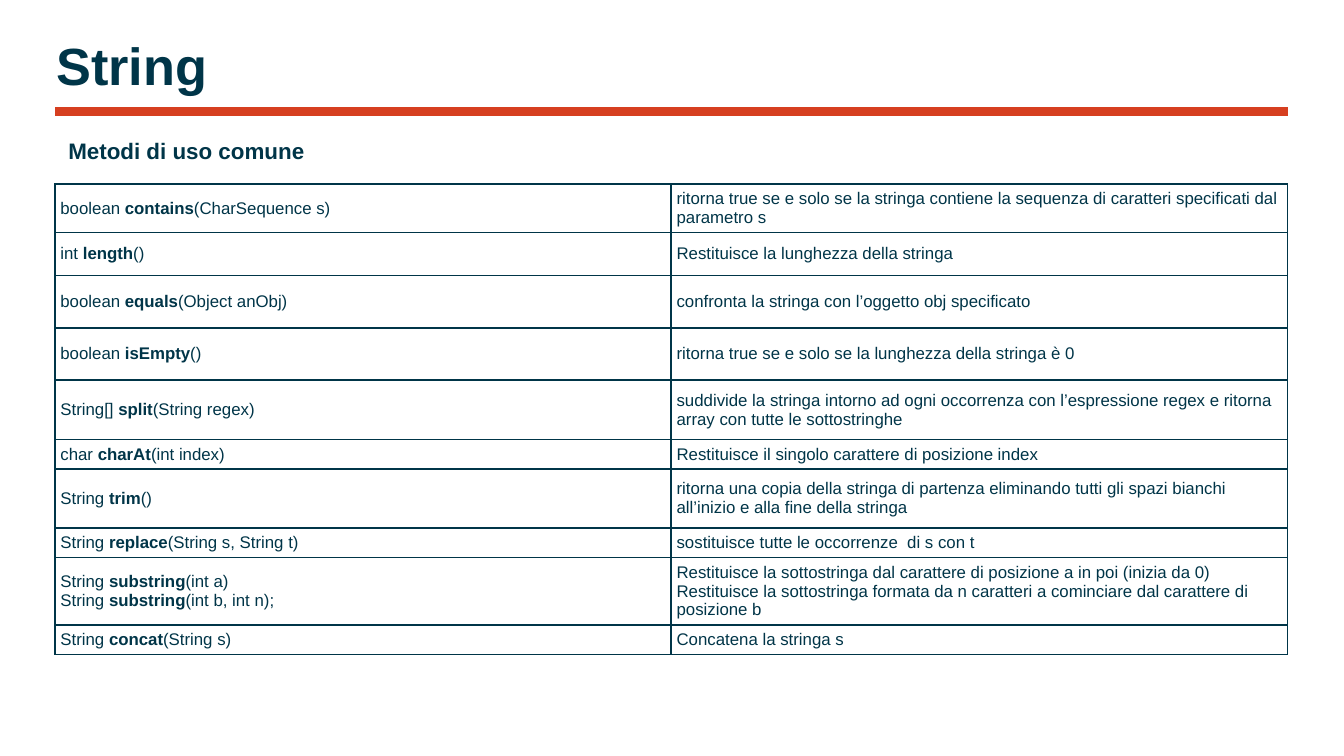
from lxml.etree import SubElement
from pptx import Presentation
from pptx.dml.color import RGBColor
from pptx.enum.shapes import MSO_CONNECTOR as Connector
from pptx.enum.text import MSO_ANCHOR as Anchor, PP_ALIGN as Align
from pptx.oxml.ns import qn
from pptx.util import Inches, Pt

NAVY = RGBColor(0x00, 0x35, 0x48)
RED = RGBColor(0xD6, 0x3F, 0x20)
METHODS = [
    (0.32, [("boolean ", "contains", "(CharSequence s)")],
     ["ritorna true se e solo se la stringa contiene la sequenza di caratteri specificati dal parametro s"]),
    (0.32, [("int ", "length", "()")], ["Restituisce la lunghezza della stringa"]),
    (0.39, [("boolean ", "equals", "(Object anObj)")],
     ["confronta la stringa con l’oggetto obj specificato"]),
    (0.39, [("boolean ", "isEmpty", "()")],
     ["ritorna true se e solo se la lunghezza della stringa è 0"]),
    (0.44, [("String[] ", "split", "(String regex)")],
     ["suddivide la stringa intorno ad ogni occorrenza con l’espressione regex e ritorna "
      "array con tutte le sottostringhe"]),
    (0.21, [("char ", "charAt", "(int index)")],
     ["Restituisce il singolo carattere di posizione index"]),
    (0.44, [("String ", "trim", "()")],
     ["ritorna una copia della stringa di partenza eliminando tutti gli spazi bianchi "
      "all’inizio e alla fine della stringa"]),
    (0.17, [("String ", "replace", "(String s, String t)")],
     ["sostituisce tutte le occorrenze  di s con t"]),
    (0.11, [("String ", "substring", "(int a)"), ("String ", "substring", "(int b, int n);")],
     ["Restituisce la sottostringa dal carattere di posizione a in poi (inizia da 0)",
      "Restituisce la sottostringa formata da n caratteri a cominciare dal carattere di posizione b"]),
    (0.01, [("String ", "concat", "(String s)")], ["Concatena la stringa s"]),
]


def add_run(paragraph, text, size, bold):
    run = paragraph.add_run()
    run.text = text
    run.font.name = "Arial"
    run.font.size = Pt(size)
    run.font.bold = bold
    run.font.color.rgb = NAVY


def draw_borders(cell):
    properties = cell._tc.get_or_add_tcPr()
    for side in ("a:lnL", "a:lnR", "a:lnT", "a:lnB"):
        border = SubElement(properties, qn(side), w=str(Pt(1)))
        SubElement(SubElement(border, qn("a:solidFill")), qn("a:srgbClr"), val=str(NAVY))


prs = Presentation()
prs.slide_width = Inches(10)
prs.slide_height = prs.slide_width * 9 // 16
slide = prs.slides.add_slide(prs.slide_layouts[5])
left = Inches(0.41)
content_width = Inches(9.17)

rule = slide.shapes.add_connector(
    Connector.STRAIGHT, left, Inches(0.83), left + content_width, Inches(0.83))
rule.line.color.rgb = RED
rule.line.width = Pt(4.5)
SubElement(rule._element.spPr, qn("a:effectLst"))

heading = slide.shapes.title
heading.left, heading.top = Inches(0.42), Inches(0.25)
heading.width, heading.height = content_width, Inches(0.43)
heading_text = heading.text_frame
heading_text.margin_left = heading_text.margin_right = 0
heading_text.margin_top = heading_text.margin_bottom = 0
heading_text.vertical_anchor = Anchor.TOP
heading_text.paragraphs[0].alignment = Align.LEFT
add_run(heading_text.paragraphs[0], "String", 28, True)

methods_frame = slide.shapes.add_table(
    len(METHODS), 2, left, Inches(1.37), content_width, Inches(3.55))
methods = methods_frame.table
methods.first_row = methods.horz_banding = False
for row, (height, signatures, descriptions) in enumerate(METHODS):
    methods.rows[row].height = Inches(height)
    for column, lines in enumerate((signatures, [(line,) for line in descriptions])):
        cell = methods.cell(row, column)
        draw_borders(cell)
        cell.fill.background()
        cell.vertical_anchor = Anchor.MIDDLE
        cell.margin_left = cell.margin_right = Inches(0.04)
        cell.margin_top = cell.margin_bottom = Inches(0.04)
        for index, parts in enumerate(lines):
            frame = cell.text_frame
            paragraph = frame.add_paragraph() if index else frame.paragraphs[0]
            for position, part in enumerate(parts):
                add_run(paragraph, part, 9, position == 1)
methods_frame.height = Inches(3.55)

subtitle = slide.shapes.add_textbox(left, Inches(0.97), Inches(8.34), Inches(0.3)).text_frame
subtitle.word_wrap = True
subtitle.vertical_anchor = Anchor.MIDDLE
add_run(subtitle.paragraphs[0], "Metodi di uso comune", 12, True)

prs.save("out.pptx")
